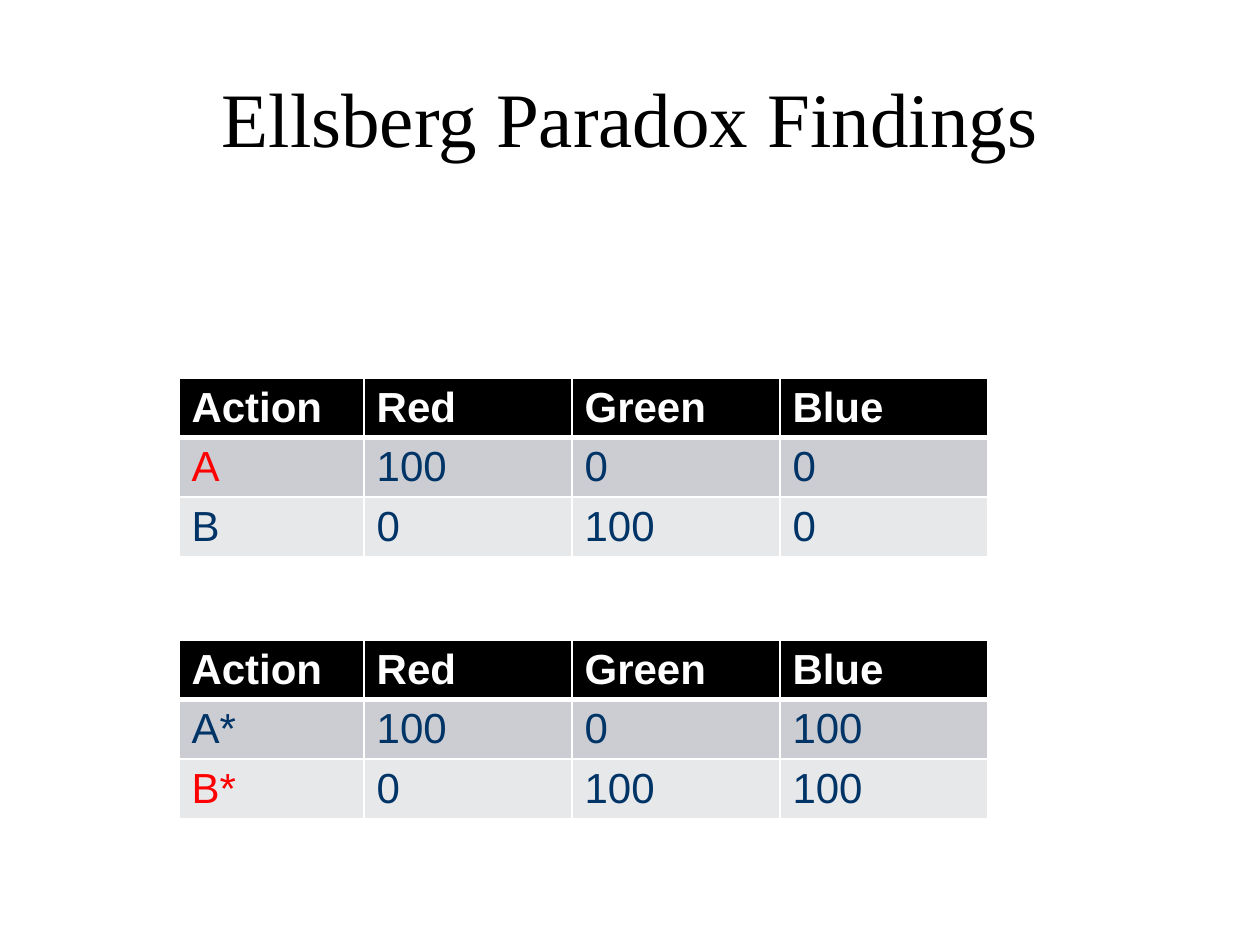
from dataclasses import dataclass

from pptx import Presentation
from pptx.dml.color import RGBColor
from pptx.enum.text import MSO_ANCHOR, PP_ALIGN
from pptx.oxml.ns import qn
from pptx.util import Inches, Pt
from lxml.etree import SubElement

BLACK = RGBColor(0x00, 0x00, 0x00)
WHITE = RGBColor(0xFF, 0xFF, 0xFF)
NAVY = RGBColor(0x00, 0x33, 0x66)
RED = RGBColor(0xFF, 0x00, 0x00)
ROW_FILLS = [BLACK, RGBColor(0xCB, 0xCD, 0xD3), RGBColor(0xE7, 0xE8, 0xEA)]

HEADER = ["Action", "Red", "Green", "Blue"]
COL_WIDTHS = [1.47, 1.65, 1.65, 1.65]
TABLE_LEFT = 1.42
ROW_HEIGHT = 0.47


@dataclass
class PayoffTable:
    top: float
    rows: list[list[str]]
    preferred: str  # action shown in red


TABLES = [
    PayoffTable(3, [["A", "100", "0", "0"], ["B", "0", "100", "0"]], "A"),
    PayoffTable(5.08, [["A*", "100", "0", "100"], ["B*", "0", "100", "100"]], "B*"),
]


def add_run(p, text: str, font: str, size: float, color: RGBColor, bold: bool = False) -> None:
    r = p.add_run()
    r.text = text
    r.font.name = font
    r.font.size = Pt(size)
    r.font.bold = bold
    r.font.color.rgb = color


def set_borders(cell, row: int) -> None:
    """White rules, thicker between the header and the body."""
    widths = {"a:lnL": 1, "a:lnR": 1, "a:lnT": 3 if row == 1 else 1, "a:lnB": 3 if row == 0 else 1}
    tc_pr = cell._tc.get_or_add_tcPr()
    for tag, width in widths.items():
        ln = SubElement(tc_pr, qn(tag), w=str(Pt(width)))
        fill = SubElement(ln, qn("a:solidFill"))
        SubElement(fill, qn("a:srgbClr"), val=str(WHITE))


def add_payoff_table(slide, spec_table: PayoffTable) -> None:
    rows = [HEADER, *spec_table.rows]
    table = slide.shapes.add_table(
        len(rows), len(HEADER), Inches(TABLE_LEFT), Inches(spec_table.top),
        Inches(sum(COL_WIDTHS)), Inches(ROW_HEIGHT * len(rows))).table
    for column, width in zip(table.columns, COL_WIDTHS):
        column.width = Inches(width)
    for i, texts in enumerate(rows):
        table.rows[i].height = Inches(ROW_HEIGHT)
        for j, text in enumerate(texts):
            cell = table.cell(i, j)
            set_borders(cell, i)
            cell.fill.solid()
            cell.fill.fore_color.rgb = ROW_FILLS[i]
            color = WHITE if i == 0 else RED if text == spec_table.preferred else NAVY
            add_run(cell.text_frame.paragraphs[0], text, "Arial", 24, color, bold=i == 0)


def main() -> None:
    prs = Presentation()
    prs.slide_width, prs.slide_height = Inches(10), Inches(7.5)
    slide = prs.slides.add_slide(prs.slide_layouts[5])

    # Title
    title = slide.shapes.title
    title.left, title.top = Inches(0.5), Inches(0.3)
    title.width, title.height = Inches(9), Inches(1.25)
    tf = title.text_frame
    tf.vertical_anchor = MSO_ANCHOR.MIDDLE
    p = tf.paragraphs[0]
    p.alignment = PP_ALIGN.CENTER
    add_run(p, "Ellsberg Paradox Findings", "Times New Roman", 44, BLACK)

    # Payoff tables
    for payoff_table in TABLES:
        add_payoff_table(slide, payoff_table)

    prs.save("out.pptx")


if __name__ == "__main__":
    main()
